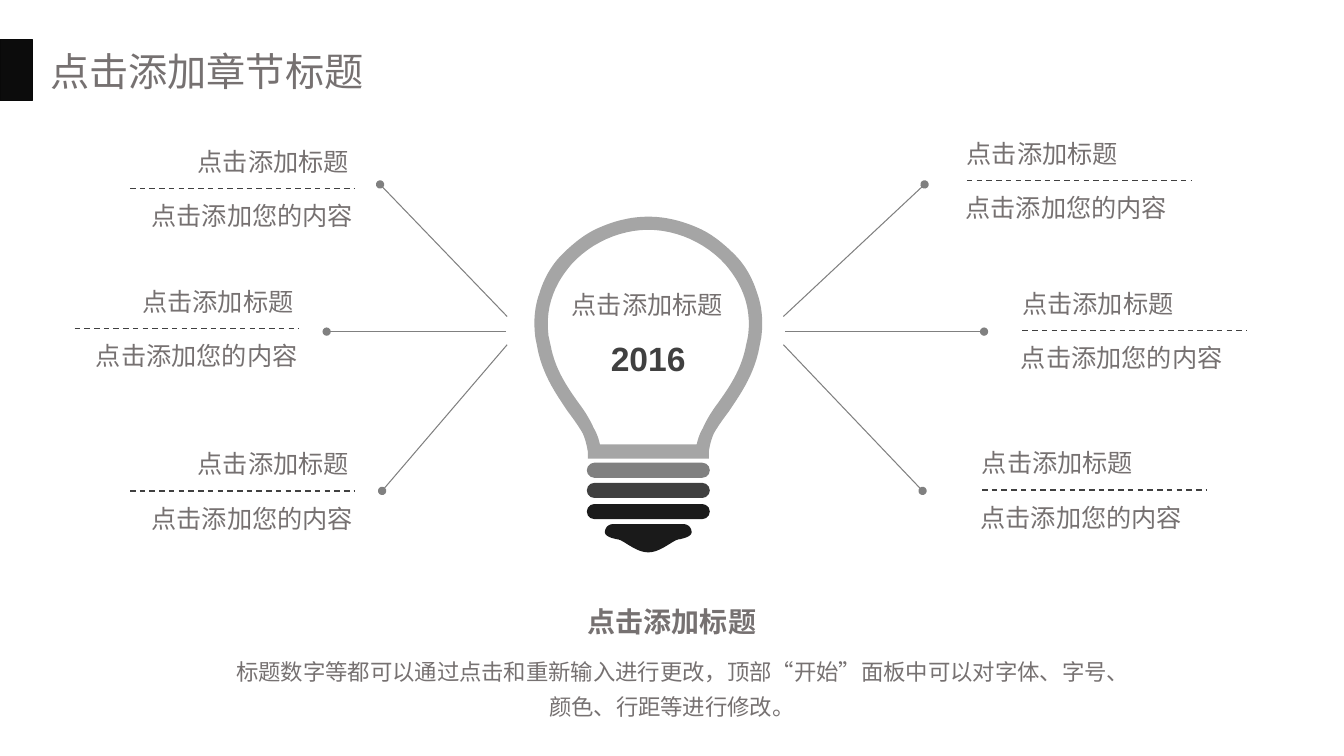
from dataclasses import dataclass
from lxml import etree
from pptx import Presentation, util as u
from pptx.dml.color import RGBColor
from pptx.enum import dml, shapes, text
from pptx.oxml.ns import qn

HEAD = "点击添加标题"
BODY = "点击添加您的内容"
TITLE = "点击添加章节标题"
YEAR = "2016"
NOTE = "标题数字等都可以通过点击和重新输入进行更改，顶部“开始”面板中可以对字体、字号、颜色、行距等进行修改。"

LEFT = [(1.29, 1.87), (0.74, 3.26), (1.29, 4.87)]
RIGHT = [(9.59, 1.79), (10.14, 3.28), (9.74, 4.86)]
RAYS = [
    (7.77, 3.14, 9.17, 1.83), (7.79, 3.29, 9.76, 3.29), (7.77, 3.42, 9.15, 4.87),
    (5.03, 3.14, 3.77, 1.83), (5.02, 3.29, 3.24, 3.29), (5.03, 3.42, 3.79, 4.87),
]

MID = 6.43
OUTER = [
    (0, 2.15),
    (0.17, 2.15, 0.33, 2.19, 0.49, 2.26),
    (0.63, 2.32, 0.75, 2.42, 0.86, 2.53),
    (0.97, 2.64, 1.04, 2.78, 1.08, 2.91),
    (1.13, 3.05, 1.14, 3.2, 1.12, 3.35),
    (1.11, 3.4, 1.1, 3.45, 1.09, 3.5),
    (1.03, 3.75, 0.9, 3.93, 0.8, 4.08),
    (0.74, 4.16, 0.69, 4.23, 0.65, 4.3),
    (0.62, 4.37, 0.61, 4.42, 0.6, 4.48),
    (0.6, 4.55),
]
INNER = [
    (0, 2.28),
    (0.28, 2.28, 0.57, 2.41, 0.76, 2.62),
    (0.9, 2.78, 1.03, 3.01, 0.99, 3.33),
    (0.98, 3.38, 0.97, 3.42, 0.96, 3.47),
    (0.91, 3.69, 0.79, 3.86, 0.69, 4),
    (0.63, 4.08, 0.58, 4.16, 0.54, 4.25),
    (0.51, 4.3, 0.49, 4.36, 0.48, 4.41),
]
TIP = [
    (0.35, 5.2),
    (0.4, 5.2, 0.43, 5.24, 0.43, 5.28),
    (0.43, 5.32, 0.36, 5.34, 0.31, 5.35),
    (0.25, 5.35, 0.13, 5.48, 0, 5.48),
]


@dataclass(frozen=True)
class Theme:
    cjk: str = "Noto Sans CJK SC"
    latin: str = "Arial"
    gray: str = "767171"
    dark: str = "404040"
    ray: str = "808080"
    bulb: str = "A5A5A5"
    base: str = "1A1A1A"
    tab: str = "0C0C0C"
    edge: str = "090909"
    title: int = 28
    year: int = 24
    foot: int = 20
    label: int = 18
    note: int = 16


T = Theme()
RINGS = [(4.59, T.ray), (4.79, T.dark), (5, T.base)]
ALIGN = text.PP_ALIGN

deck = Presentation()
deck.slide_width, deck.slide_height = u.Inches(13.33), u.Inches(7.5)
slide = deck.slides.add_slide(deck.slide_layouts[6])


def rgb(code):
    return RGBColor.from_string(code)


def write(words, box, size, align=ALIGN.LEFT, wrap=False, font=T.cjk,
          color=T.gray, bold=False, space=None):
    frame = slide.shapes.add_textbox(*map(u.Inches, box)).text_frame
    frame.word_wrap = wrap
    frame.auto_size = text.MSO_AUTO_SIZE.SHAPE_TO_FIT_TEXT
    para = frame.paragraphs[0]
    para.alignment = align
    if space:
        para.line_spacing = space
    run = para.add_run()
    run.text = words
    face = run.font
    face.size, face.bold, face.name = u.Pt(size), bold, font
    face.color.rgb = rgb(color)
    etree.SubElement(run._r.get_or_add_rPr(), qn("a:ea"), typeface=T.cjk)


def stroke(ends, color, width):
    line = slide.shapes.add_connector(
        shapes.MSO_CONNECTOR.STRAIGHT, *map(u.Inches, ends))
    line.line.color.rgb = rgb(color)
    line.line.width = u.Pt(width)
    etree.SubElement(line._element.spPr, qn("a:effectLst"))
    return line.line


def paint(shape, color, edge=None):
    shape.shadow.inherit = False
    shape.fill.solid()
    shape.fill.fore_color.rgb = rgb(color)
    if edge:
        shape.line.color.rgb = rgb(edge)
        shape.line.width = u.Pt(1)
    else:
        shape.line.fill.background()


def bend(a, b, c, d, t):
    s = 1 - t
    return s**3 * a + 3 * s * s * t * b + 3 * s * t * t * c + t**3 * d


def trace(half, steps=12):
    side = [half[0]]
    for part in half[1:]:
        if len(part) == 2:
            side.append(part)
            continue
        x, y = side[-1]
        for i in range(1, steps + 1):
            t = i / steps
            side.append((bend(x, *part[::2], t), bend(y, *part[1::2], t)))
    both = side + [(-x, y) for x, y in reversed(side)]
    return [(u.Inches(MID + x), u.Inches(y)) for x, y in both]


def outline(halves, color):
    first, *rest = map(trace, halves)
    form = slide.shapes.build_freeform(*first[0])
    form.add_line_segments(first[1:], close=True)
    for ring in rest:
        form.move_to(*ring[0])
        form.add_line_segments(ring[1:], close=True)
    paint(form.convert_to_shape(), color)


def card(x, y, head, body, side, mid):
    write(HEAD, (x + head, y - 0.47, 1.7, 0.4), T.label, side)
    write(BODY, (x + body, y + 0.07, 2.47, 0.4), T.label, mid, True)
    stroke((x, y, x + 2.22, y), T.dark, 1).dash_style = dml.MSO_LINE.DASH


tab = slide.shapes.add_shape(
    shapes.MSO_SHAPE.RECTANGLE, *map(u.Inches, (0, 0.39, 0.32, 0.61)))
paint(tab, T.tab, T.edge)
write(TITLE, (0.4, 0.42, 3.31, 0.57), T.title)

for ends in RAYS:
    ray = stroke(ends, T.ray, 0.75)
    etree.SubElement(ray._get_or_add_ln(), qn("a:tailEnd"), type="oval")

outline([OUTER, INNER], T.bulb)
for y, color in RINGS:
    ring = slide.shapes.add_shape(
        shapes.MSO_SHAPE.ROUNDED_RECTANGLE, *map(u.Inches, (5.82, y, 1.22, 0.15)))
    ring.adjustments[0] = 0.5
    paint(ring, color)
outline([TIP], T.base)
write(YEAR, (5.96, 3.3, 0.94, 0.5), T.year, font=T.latin, color=T.dark, bold=True)
write(HEAD, (5.3, 2.82, 2.24, 0.4), T.label, ALIGN.CENTER, True)

for x, y in RIGHT:
    card(x, y, -0.1, -0.25, ALIGN.LEFT, ALIGN.CENTER)
for x, y in LEFT:
    card(x, y, 0.57, -0.16, ALIGN.RIGHT, ALIGN.RIGHT)

write(NOTE, (2.15, 6.4, 9.03, 0.79), T.note, ALIGN.CENTER, True, space=1.3)
write(HEAD, (5.73, 5.95, 1.87, 0.43), T.foot, ALIGN.CENTER, font=T.latin, bold=True)

deck.save("out.pptx")
